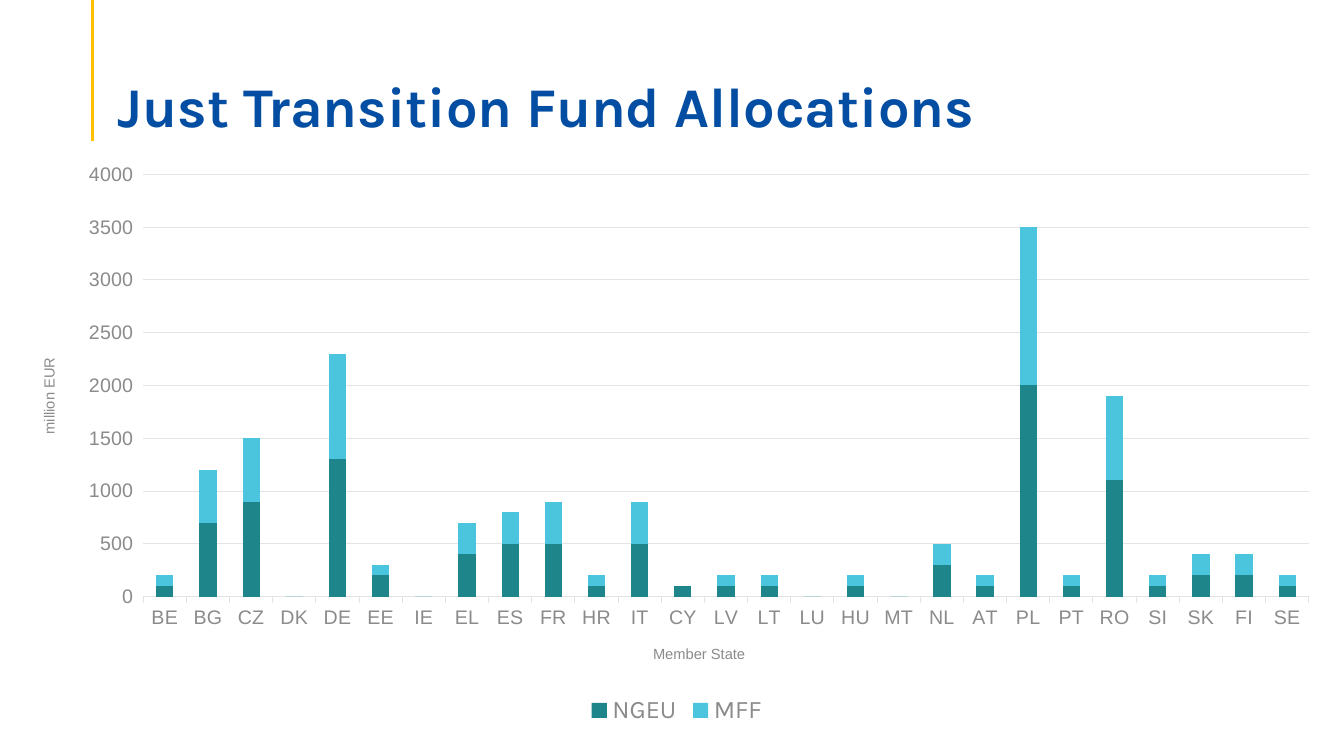
from typing import NamedTuple

from lxml.etree import SubElement
from pptx import Presentation
from pptx.chart.axis import CategoryAxis, ValueAxis
from pptx.chart.data import CategoryChartData
from pptx.dml.color import RGBColor
from pptx.enum.chart import XL_CHART_TYPE, XL_LEGEND_POSITION, XL_TICK_MARK
from pptx.enum.shapes import MSO_CONNECTOR
from pptx.enum.text import MSO_ANCHOR, MSO_AUTO_SIZE, PP_ALIGN
from pptx.oxml.ns import qn
from pptx.slide import Slide
from pptx.text.text import Font, TextFrame
from pptx.util import Inches, Pt

BLUE = RGBColor(0x03, 0x4E, 0xA2)
GOLD = RGBColor(0xFF, 0xC0, 0x00)
TEAL = RGBColor(0x1E, 0x85, 0x8B)
AQUA = RGBColor(0x4B, 0xC5, 0xDE)
GREY = RGBColor(0x8B, 0x8B, 0x8B)
PALE = RGBColor(0xE4, 0xE4, 0xE4)
HEAD, BODY = "Karla", "Arial"
WIDE, HIGH = Inches(13.33), Inches(7.5)


class State(NamedTuple):
    code: str
    ngeu: int
    mff: int


class Share(NamedTuple):
    """A place as shares of the slide's width and height."""
    left: float
    top: float
    width: float
    height: float

    def box(self) -> tuple[int, int, int, int]:
        return (int(self.left * WIDE), int(self.top * HIGH),
                int(self.width * WIDE), int(self.height * HIGH))


STATES = [
    State("BE", 100, 100), State("BG", 700, 500), State("CZ", 900, 600),
    State("DK", 0, 0), State("DE", 1300, 1000), State("EE", 200, 100),
    State("IE", 0, 0), State("EL", 400, 300), State("ES", 500, 300),
    State("FR", 500, 400), State("HR", 100, 100), State("IT", 500, 400),
    State("CY", 100, 0), State("LV", 100, 100), State("LT", 100, 100),
    State("LU", 0, 0), State("HU", 100, 100), State("MT", 0, 0),
    State("NL", 300, 200), State("AT", 100, 100), State("PL", 2000, 1500),
    State("PT", 100, 100), State("RO", 1100, 800), State("SI", 100, 100),
    State("SK", 200, 200), State("FI", 200, 200), State("SE", 100, 100),
]
FUNDS = {"NGEU": TEAL, "MFF": AQUA}
TITLE = Share(0.08, 0.07, 0.86, 0.115)
CHART = Share(0.0135, 0.201, 0.98, 0.765)


def style(font: Font, size: float, color: RGBColor = GREY,
          face: str = BODY, bold: bool = False) -> None:
    font.size, font.name, font.bold = Pt(size), face, bold
    font.color.rgb = color


def write(frame: TextFrame, text: str, **form) -> None:
    frame.text = text
    run = frame.paragraphs[0].runs[0]
    style(run.font, **form)


def place(layout, **shares: float) -> None:
    """Fill a chart layout element with shares of the chart's size."""
    manual = SubElement(layout, qn("c:manualLayout"))
    if "w" in shares:
        SubElement(manual, qn("c:layoutTarget"), val="inner")
    for key in ("x", "y"):
        SubElement(manual, qn(f"c:{key}Mode"), val="edge")
    for key, share in shares.items():
        SubElement(manual, qn(f"c:{key}"), val=str(share))


def label(axis: CategoryAxis | ValueAxis, text: str, x: float, y: float) -> None:
    title = axis.axis_title
    write(title.text_frame, text, size=10.5)
    place(title._element.find(qn("c:layout")), x=x, y=y)
    style(axis.tick_labels.font, 14)
    axis.major_tick_mark = XL_TICK_MARK.OUTSIDE
    axis.minor_tick_mark = XL_TICK_MARK.NONE


def add_bars(slide: Slide) -> None:
    data = CategoryChartData(number_format="0")
    data.categories = [state.code for state in STATES]
    for fund in FUNDS:
        data.add_series(fund, [getattr(state, fund.lower()) for state in STATES])
    chart = slide.shapes.add_chart(
        XL_CHART_TYPE.COLUMN_STACKED, *CHART.box(), data).chart
    chart.has_title = False
    style(chart.font, 10)

    plot = chart.plots[0]
    plot.gap_width, plot.overlap, plot.vary_by_categories = 150, 100, False
    for bar, color in zip(plot.series, FUNDS.values()):
        bar.format.fill.solid()
        bar.format.fill.fore_color.rgb = color

    states, euros = chart.category_axis, chart.value_axis
    label(states, "Member State", 0.48, 0.847)
    label(euros, "million EUR", 0.014, 0.351)
    euros.minimum_scale, euros.maximum_scale, euros.major_unit = 0, 4000, 500
    euros.format.line.fill.background()
    for line in (states.format.line, euros.major_gridlines.format.line):
        line.color.rgb, line.width = PALE, Pt(0.75)

    area = chart._chartSpace.chart.plotArea
    layout = area.find(qn("c:layout"))
    if layout is None:
        layout = area.makeelement(qn("c:layout"))
        area.insert(0, layout)
    place(layout, x=0.095, y=0.039, w=0.885, h=0.73)

    chart.has_legend = True
    chart.legend.position = XL_LEGEND_POSITION.BOTTOM
    chart.legend.include_in_layout = False
    style(chart.legend.font, 18, face=HEAD)


def add_head(slide: Slide) -> None:
    x = int(0.069 * WIDE)
    rule = slide.shapes.add_connector(
        MSO_CONNECTOR.STRAIGHT, x, 0, x, int(0.187 * HIGH))
    rule.line.color.rgb, rule.line.width = GOLD, Pt(2.25)
    SubElement(rule._element.spPr, qn("a:effectLst"))

    title = slide.shapes.title
    title.left, title.top, title.width, title.height = TITLE.box()
    frame = title.text_frame
    write(frame, "Just Transition Fund Allocations",
          size=40, color=BLUE, face=HEAD, bold=True)
    frame.word_wrap, frame.auto_size = True, MSO_AUTO_SIZE.NONE
    frame.vertical_anchor, frame.margin_bottom = MSO_ANCHOR.BOTTOM, 0
    frame.paragraphs[0].alignment = PP_ALIGN.LEFT
    frame.paragraphs[0].line_spacing = 0.9


def main() -> None:
    deck = Presentation()
    deck.slide_width, deck.slide_height = WIDE, HIGH
    slide = deck.slides.add_slide(deck.slide_layouts[5])
    add_head(slide)
    add_bars(slide)
    deck.save("out.pptx")


if __name__ == "__main__":
    main()
